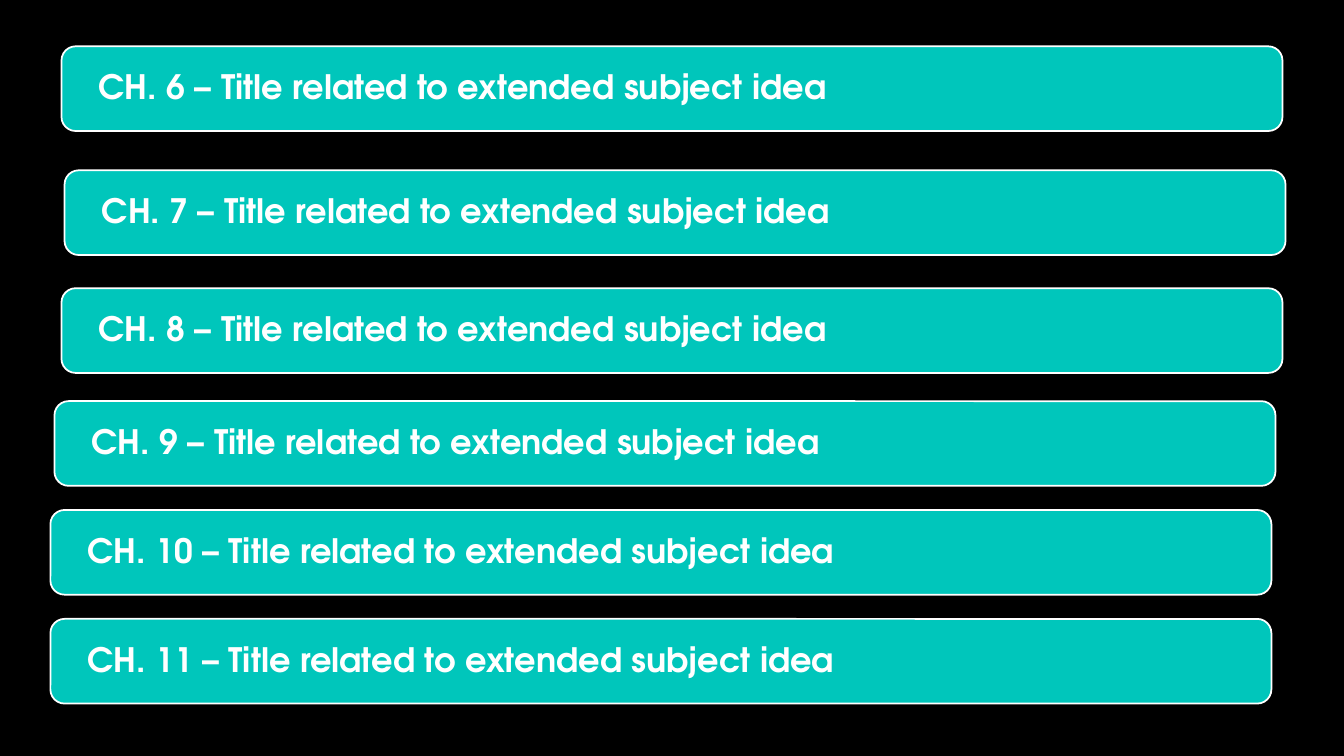
"""Build a slide listing chapters 6 to 11 as rounded bars."""
from dataclasses import dataclass

from pptx import Presentation
from pptx.dml.color import RGBColor
from pptx.enum.shapes import MSO_SHAPE
from pptx.enum.text import MSO_ANCHOR, PP_ALIGN
from pptx.slide import Slide
from pptx.util import Inches, Pt

ROUNDED = MSO_SHAPE.ROUNDED_RECTANGLE
MIDDLE = MSO_ANCHOR.MIDDLE
LEFT = PP_ALIGN.LEFT

BLACK = RGBColor(0x00, 0x00, 0x00)
WHITE = RGBColor(0xFF, 0xFF, 0xFF)
TEAL = RGBColor(0x00, 0xC6, 0xBB)

FONT = "TeX Gyre Adventor"
BAR_WIDTH = 12.11
BAR_HEIGHT = 0.84
LABEL_INSET = 0.04
LABEL_MARGIN = 0.33


@dataclass(frozen=True)
class Chapter:
    number: int
    left: float
    top: float


CHAPTERS = [
    Chapter(6, 0.61, 0.46),
    Chapter(7, 0.64, 1.69),
    Chapter(8, 0.61, 2.86),
    Chapter(9, 0.54, 3.98),
    Chapter(10, 0.5, 5.06),
    Chapter(11, 0.5, 6.14),
]


def draw_chapter(slide: Slide, chapter: Chapter) -> None:
    entry = slide.shapes.add_group_shape()

    bar = entry.shapes.add_shape(
        ROUNDED, Inches(chapter.left), Inches(chapter.top),
        Inches(BAR_WIDTH), Inches(BAR_HEIGHT))
    bar.shadow.inherit = False
    bar.fill.solid()
    bar.fill.fore_color.rgb = TEAL
    bar.line.color.rgb = WHITE
    bar.line.width = Pt(1.25)

    label = entry.shapes.add_textbox(
        Inches(chapter.left + LABEL_INSET), Inches(chapter.top + LABEL_INSET),
        Inches(BAR_WIDTH - 2 * LABEL_INSET), Inches(BAR_HEIGHT - 2 * LABEL_INSET))
    frame = label.text_frame
    frame.word_wrap = True
    frame.vertical_anchor = MIDDLE
    frame.margin_left = frame.margin_right = Inches(LABEL_MARGIN)
    frame.margin_top = frame.margin_bottom = Inches(0)

    heading = frame.paragraphs[0]
    heading.alignment = LEFT
    heading.line_spacing = 0.9
    wording = heading.add_run()
    wording.text = f"CH. {chapter.number} – Title related to extended subject idea"
    wording.font.name = FONT
    wording.font.size = Pt(24)
    wording.font.bold = True
    wording.font.color.rgb = WHITE


def main() -> None:
    deck = Presentation()
    deck.slide_width = Inches(13.33)
    deck.slide_height = Inches(7.5)
    slide = deck.slides.add_slide(deck.slide_layouts[6])
    slide.background.fill.solid()
    slide.background.fill.fore_color.rgb = BLACK
    for chapter in CHAPTERS:
        draw_chapter(slide, chapter)
    deck.save("out.pptx")


if __name__ == "__main__":
    main()
